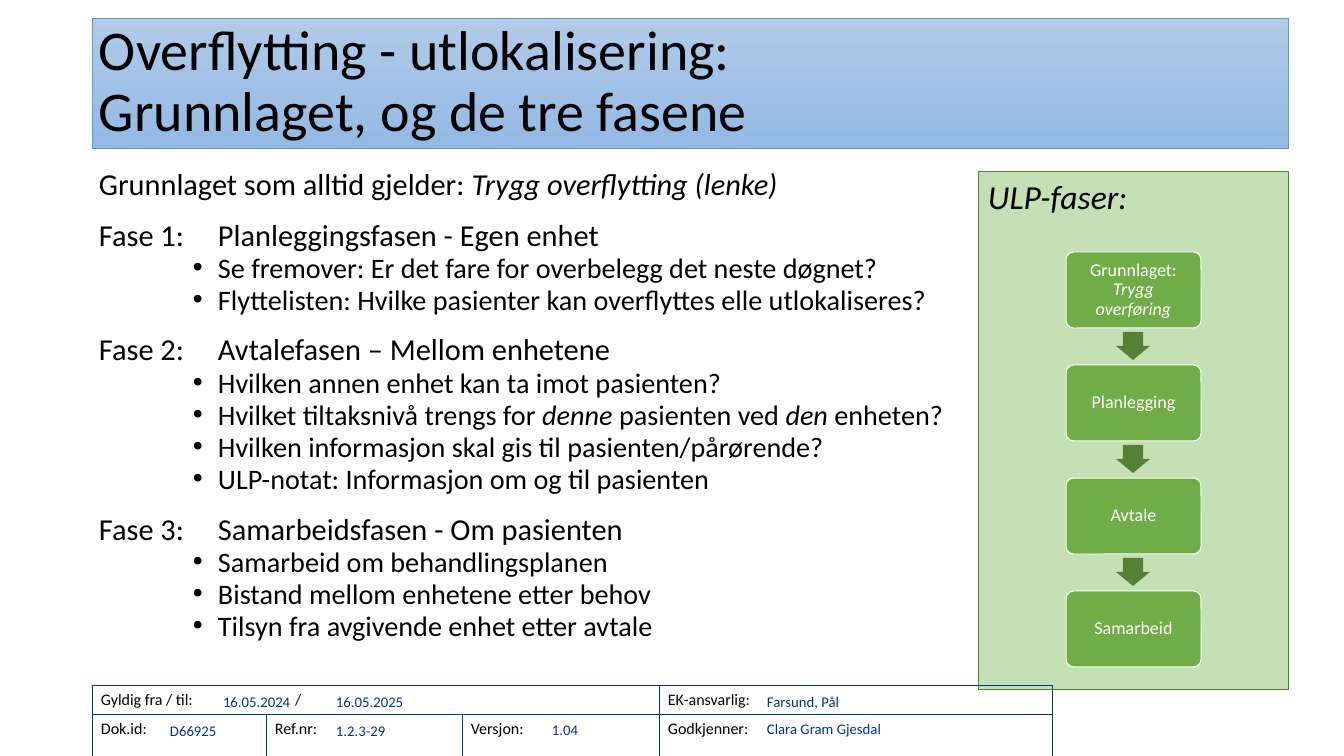
from dataclasses import dataclass

from lxml.etree import SubElement
from pptx import Presentation
from pptx.dml.color import RGBColor
from pptx.enum.shapes import MSO_SHAPE
from pptx.enum.text import MSO_ANCHOR, PP_ALIGN
from pptx.oxml import parse_xml
from pptx.oxml.ns import nsdecls, qn
from pptx.util import Pt

PX = 12700


@dataclass(frozen=True)
class Theme:
    font: str = "Calibri"
    black: str = "000000"
    white: str = "FFFFFF"
    navy: str = "00338D"
    title_top: str = "B1CBE9"
    title_bottom: str = "93B9E4"
    title_line: str = "5B9BD5"
    panel: str = "C5E0B4"
    green: str = "70AD47"
    dark_green: str = "548235"
    title_size: float = 56
    panel_size: float = 33.6
    phase_size: float = 30.4
    bullet_size: float = 28.2
    step_size: float = 18
    label_size: float = 16
    value_size: float = 14.7


class SlideBuilder:
    def __init__(self, slide, theme):
        self.s = slide
        self.t = theme

    def emu(self, *lengths):
        return [n * PX for n in lengths]

    def color(self, name):
        return RGBColor.from_string(getattr(self.t, name))

    def runs(self, p, text, size, color="black"):
        """Add text to a paragraph; parts between asterisks are italic."""
        for i, part in enumerate(text.split("*")):
            if part:
                r = p.add_run()
                r.text = part
                r.font.name = self.t.font
                r.font.size = Pt(size)
                r.font.italic = i % 2 == 1
                r.font.color.rgb = self.color(color)

    def frame(self, sp, anchor=MSO_ANCHOR.TOP, inset=(7, 4)):
        tf = sp.text_frame
        tf.word_wrap = True
        tf.vertical_anchor = anchor
        tf.margin_left = tf.margin_right = inset[0] * PX
        tf.margin_top = tf.margin_bottom = inset[1] * PX
        return tf

    def shape(self, kind, box, fill, line=None, weight=0.5):
        sp = self.s.shapes.add_shape(kind, *self.emu(*box))
        sp.shadow.inherit = False
        sp.fill.solid()
        sp.fill.fore_color.rgb = self.color(fill)
        if line:
            sp.line.color.rgb = self.color(line)
            sp.line.width = Pt(weight)
        else:
            sp.line.fill.background()
        return sp

    def title(self, lines, box):
        sp = self.shape(MSO_SHAPE.RECTANGLE, box, "title_top", "title_line")
        sp.fill.gradient()
        sp.fill.gradient_angle = 270
        for stop, name in zip(sp.fill.gradient_stops, ("title_top", "title_bottom")):
            stop.color.rgb = self.color(name)
        p = self.frame(sp, MSO_ANCHOR.MIDDLE).paragraphs[0]
        p.alignment = PP_ALIGN.LEFT
        p.line_spacing = 0.9
        for i, line in enumerate(lines):
            if i:
                p.add_line_break()
            self.runs(p, line, self.t.title_size)

    def phases(self, intro, phases, box):
        tf = self.frame(self.s.shapes.add_textbox(*self.emu(*box)))
        p = tf.paragraphs[0]
        p.line_spacing = 0.7
        self.runs(p, intro, self.t.phase_size)
        for number, (name, bullets) in enumerate(phases, 1):
            heading = f"Fase {number}:\t{name}"
            self.phase_line(tf, heading, 119, 25.2, self.t.phase_size)
            for text in bullets:
                self.phase_line(tf, text, 25, 8.4, self.t.bullet_size, "•")

    def phase_line(self, tf, text, hanging, space, size, bullet=None):
        p = tf.add_paragraph()
        pPr = p._p.get_or_add_pPr()
        pPr.set("marL", str(119 * PX))
        pPr.set("indent", str(-hanging * PX))
        if bullet:
            SubElement(pPr, qn("a:buFont")).set("typeface", "Arial")
            SubElement(pPr, qn("a:buChar")).set("char", bullet)
        p.line_spacing = 0.7
        p.space_before = Pt(space)
        self.runs(p, text, size)

    def panel(self, heading, box):
        sp = self.shape(MSO_SHAPE.RECTANGLE, box, "panel", "dark_green")
        p = self.frame(sp, inset=(10, 5)).paragraphs[0]
        p.alignment = PP_ALIGN.LEFT
        self.runs(p, heading, self.t.panel_size)

    def flow(self, steps, left, top, width, height, pitch):
        """Stack rounded steps with a down arrow centred in each gap."""
        for i, text in enumerate(steps):
            y = top + i * pitch
            if i:
                arrow = (left + width // 2 - 17, y - 33, 34, 28)
                sp = self.shape(MSO_SHAPE.DOWN_ARROW, arrow, "dark_green")
                sp.adjustments[0] = 0.6
                sp.adjustments[1] = 0.5
            sp = self.shape(MSO_SHAPE.ROUNDED_RECTANGLE, (left, y, width, height),
                            "green", "white", 1)
            sp.adjustments[0] = 0.1
            p = self.frame(sp, MSO_ANCHOR.MIDDLE, (7, 5)).paragraphs[0]
            p.alignment = PP_ALIGN.CENTER
            p.line_spacing = 0.9
            self.runs(p, text, self.t.step_size, "white")

    def table(self, rows, left, top, widths, heights):
        box = self.emu(left, top, sum(widths), sum(heights))
        table = self.s.shapes.add_table(len(rows), len(widths), *box).table
        table.first_row = table.horz_banding = False
        for col, width in zip(table.columns, widths):
            col.width = width * PX
        for row, height in zip(table.rows, heights):
            row.height = height * PX
        table.cell(0, 0).merge(table.cell(0, 2))
        for i, row in enumerate(rows):
            for j, text in enumerate(row):
                self.cell(table.cell(i, j), text, i < len(rows) - 1)

    def cell(self, cell, text, bottom_line):
        cell.fill.background()
        cell.margin_left = cell.margin_right = 9 * PX
        cell.margin_top, cell.margin_bottom = self.emu(5, 4)
        p = cell.text_frame.paragraphs[0]
        if "\t" in text:
            tabs = SubElement(p._p.get_or_add_pPr(), qn("a:tabLst"))
            tab = SubElement(tabs, qn("a:tab"))
            tab.set("pos", str(194 * PX))
            tab.set("algn", "l")
        self.runs(p, text, self.t.label_size)
        tcPr = cell._tc.get_or_add_tcPr()
        solid = f'<a:solidFill><a:srgbClr val="{self.t.navy}"/></a:solidFill>'
        for k, side in enumerate("LRTB"):
            paint = solid if side != "B" or bottom_line else "<a:noFill/>"
            tcPr.insert(k, parse_xml(
                f'<a:ln{side} {nsdecls("a")} w="{PX}">{paint}</a:ln{side}>'))

    def value(self, text, left, top, width):
        tf = self.frame(self.s.shapes.add_textbox(*self.emu(left, top, width, 25)))
        tf.word_wrap = False
        tf.margin_right = 0
        self.runs(tf.paragraphs[0], text, self.t.value_size, "navy")


PHASES = [
    ("Planleggingsfasen - Egen enhet", [
        "Se fremover: Er det fare for overbelegg det neste døgnet?",
        "Flyttelisten: Hvilke pasienter kan overflyttes elle utlokaliseres?"]),
    ("Avtalefasen – Mellom enhetene", [
        "Hvilken annen enhet kan ta imot pasienten?",
        "Hvilket tiltaksnivå trengs for *denne* pasienten ved *den* enheten?",
        "Hvilken informasjon skal gis til pasienten/pårørende?",
        "ULP-notat: Informasjon om og til pasienten"]),
    ("Samarbeidsfasen - Om pasienten", [
        "Samarbeid om behandlingsplanen",
        "Bistand mellom enhetene etter behov",
        "Tilsyn fra avgivende enhet etter avtale"]),
]
STEPS = ["Grunnlaget: *Trygg overføring*", "Planlegging", "Avtale", "Samarbeid"]
LABELS = [["Gyldig fra / til:\t/", "", "", "EK-ansvarlig:"],
          ["Dok.id:", "Ref.nr:", "Versjon:", "Godkjenner:"]]
VALUES = [("16.05.2024", 216, 689, 84), ("16.05.2025", 329, 689, 84),
          ("Farsund, Pål", 760, 689, 88), ("D66925", 163, 718, 61),
          ("1.2.3-29", 329, 718, 64), ("1.04", 545, 717, 44),
          ("Clara Gram Gjesdal", 760, 716, 130)]


def main():
    prs = Presentation()
    prs.slide_width, prs.slide_height = 1344 * PX, 756 * PX
    b = SlideBuilder(prs.slides.add_slide(prs.slide_layouts[6]), Theme())
    b.title(["Overflytting - utlokalisering:", "Grunnlaget, og de tre fasene"],
            (92, 18, 1196, 130))
    b.phases("Grunnlaget som alltid gjelder: *Trygg overflytting (lenke)*",
             PHASES, (92, 171, 870, 518))
    b.panel("*ULP-faser:*", (978, 171, 310, 518))
    b.flow(STEPS, 1066, 252, 135, 76, 113)
    b.table(LABELS, 92, 685, (174, 196, 197, 393), (29, 42))
    for value in VALUES:
        b.value(*value)
    prs.save("out.pptx")


if __name__ == "__main__":
    main()
